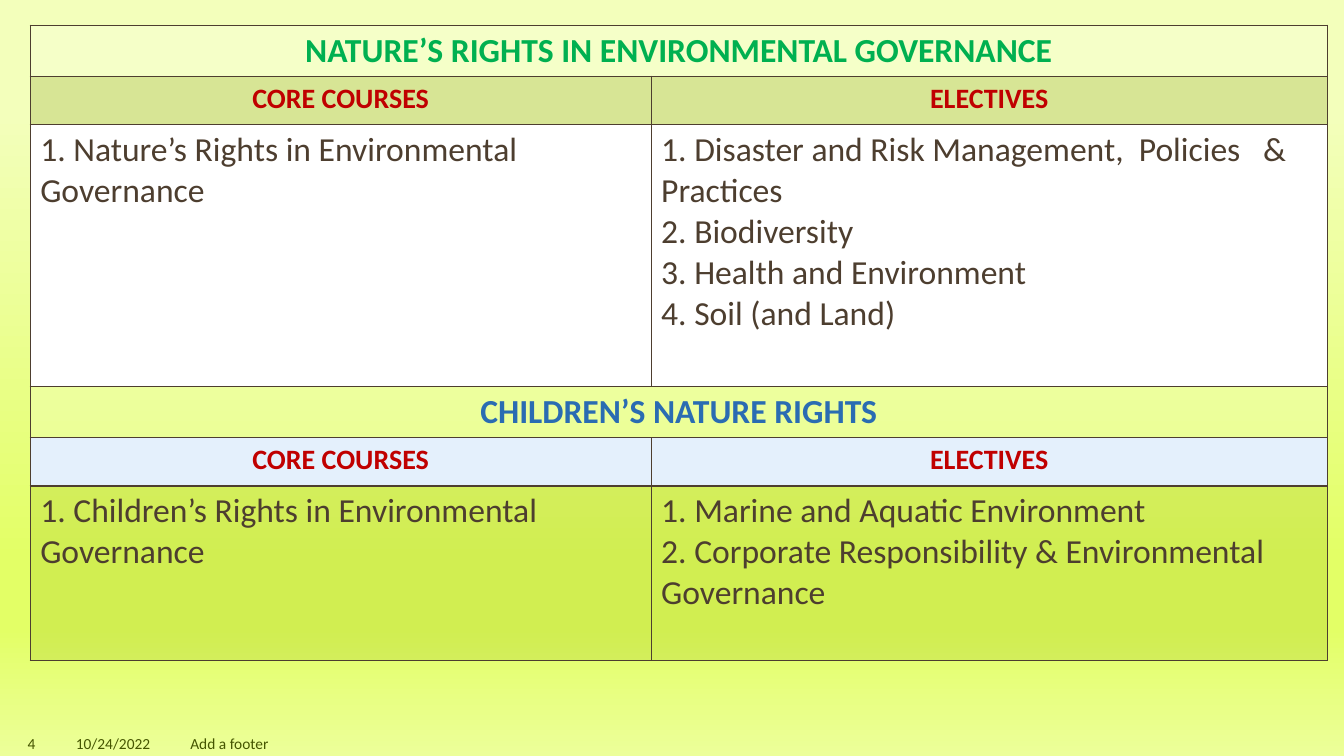
from lxml import etree
from pptx import Presentation
from pptx import util as u
from pptx.dml.color import RGBColor
from pptx.enum import text
from pptx.oxml import parse_xml
from pptx.oxml.ns import qn

PROGRAMMES = [
    {
        "title": "NATURE’S RIGHTS IN ENVIRONMENTAL GOVERNANCE",
        "core": ["1. Nature’s Rights in Environmental Governance"],
        "electives": [
            "1. Disaster and Risk Management,  Policies   & Practices",
            "2. Biodiversity",
            "3. Health and Environment",
            "4. Soil (and Land)",
        ],
        "title_color": "00B050",
        "head_fill": ("688000", 20),
        "body_fill": ("FFFFFF", 100),
        "body_height": 187.2,
    },
    {
        "title": "CHILDREN’S NATURE RIGHTS",
        "core": ["1. Children’s Rights in Environmental Governance"],
        "electives": [
            "1. Marine and Aquatic Environment",
            "2. Corporate Responsibility & Environmental Governance",
        ],
        "title_color": "2A6CB2",
        "head_fill": ("E4F0FC", 100),
        "body_fill": ("8BAA00", 20),
        "body_height": 124.5,
    },
]
HEADINGS = ["CORE COURSES", "ELECTIVES"]
LEFT, CENTER, RIGHT = (text.PP_ALIGN.LEFT, text.PP_ALIGN.CENTER,
                       text.PP_ALIGN.RIGHT)
# text, left, width, alignment
FOOTERS = [
    ("4", 0, 32.4, RIGHT),
    ("10/24/2022", 36, 78.5, RIGHT),
    ("Add a footer", 128.9, 720, LEFT),
]
FOOTER_TOP, FOOTER_HEIGHT = 522, 18
TABLE_LEFT, TABLE_TOP = 21.6, 18
COLUMNS = [443.5, 483.1]
TITLE_HEIGHT, HEAD_HEIGHT = 36.5, 34.5

THEME = {
    "font": "Calibri",
    "background": [(15, "F3FFBB"), (74, "E3FF66"), (83, "E3FF66"), (100, "ECFF99")],
    "title_fill": ("FFFFFF", 20),
    "border": "4D3E2F",
    "title": {"size": 24, "bold": True},
    "head": {"size": 20, "bold": True, "color": "C00000"},
    "body": {"size": 24, "bold": False, "color": "4D3E2F"},
    "footer": {"size": 11, "bold": False, "color": "455500"},
}


def write(tf, lines, style, align):
    for i, line in enumerate(lines):
        p = tf.paragraphs[0] if i == 0 else tf.add_paragraph()
        p.alignment = align
        r = p.add_run()
        r.text = line
        formats = {"name": THEME["font"], "size": u.Pt(style["size"]),
                   "bold": style["bold"]}
        for key, value in formats.items():
            setattr(r.font, key, value)
        r.font.color.rgb = RGBColor.from_string(style["color"])


def set_background(s):
    fill = s.background.fill
    fill.gradient()
    fill.gradient_angle = 270
    stops = s.background._cSld.find(".//" + qn("a:gsLst"))
    for stop in list(stops):
        stops.remove(stop)
    for position, color in THEME["background"]:
        gs = etree.SubElement(stops, qn("a:gs"), pos=str(position * 1000))
        etree.SubElement(gs, qn("a:srgbClr"), val=color)


def paint(cell, fill):
    """Fill a cell with (colour, opacity in percent) and rule its four sides."""
    color, opacity = fill
    cell.fill.solid()
    cell.fill.fore_color.rgb = RGBColor.from_string(color)
    tcPr = cell._tc.get_or_add_tcPr()
    if opacity < 100:
        etree.SubElement(tcPr.find(".//" + qn("a:srgbClr")), qn("a:alpha"),
                         val=str(opacity * 1000))
    for i, side in enumerate("LRTB"):
        tcPr.insert(i, parse_xml(
            f'<a:ln{side} xmlns:a="http://schemas.openxmlformats.org/drawingml/2006/main"'
            f' w="{u.Pt(1)}"><a:solidFill><a:srgbClr val="{THEME["border"]}"/>'
            f'</a:solidFill></a:ln{side}>'))


def add_programme(table, top_row, programme):
    title_style = {**THEME["title"], "color": programme["title_color"]}
    contents = [programme["core"], programme["electives"]]
    rows = [
        (TITLE_HEIGHT, THEME["title_fill"], title_style, CENTER, [[programme["title"]]]),
        (HEAD_HEIGHT, programme["head_fill"], THEME["head"], CENTER,
         [[h] for h in HEADINGS]),
        (programme["body_height"], programme["body_fill"], THEME["body"], LEFT, contents),
    ]
    table.cell(top_row, 0).merge(table.cell(top_row, 1))
    for r, (height, fill, style, align, texts) in enumerate(rows, top_row):
        table.rows[r].height = u.Pt(height)
        for c in range(len(COLUMNS)):
            paint(table.cell(r, c), fill)
        for c, lines in enumerate(texts):
            write(table.cell(r, c).text_frame, lines, style, align)


def main():
    prs = Presentation()
    prs.slide_width, prs.slide_height = u.Pt(960), u.Pt(540)
    s = prs.slides.add_slide(prs.slide_layouts[6])
    set_background(s)

    for label, left, width, align in FOOTERS:
        sp = s.shapes.add_textbox(u.Pt(left), u.Pt(FOOTER_TOP),
                                  u.Pt(width), u.Pt(FOOTER_HEIGHT))
        tf = sp.text_frame
        tf.word_wrap = True
        tf.vertical_anchor = text.MSO_ANCHOR.MIDDLE
        write(tf, [label], THEME["footer"], align)

    height = sum(TITLE_HEIGHT + HEAD_HEIGHT + p["body_height"] for p in PROGRAMMES)
    table = s.shapes.add_table(
        3 * len(PROGRAMMES), len(COLUMNS), u.Pt(TABLE_LEFT), u.Pt(TABLE_TOP),
        u.Pt(sum(COLUMNS)), u.Pt(height)).table
    table.first_row = table.horz_banding = False
    for column, width in zip(table.columns, COLUMNS):
        column.width = u.Pt(width)
    for i, programme in enumerate(PROGRAMMES):
        add_programme(table, 3 * i, programme)

    prs.save("out.pptx")


if __name__ == "__main__":
    main()
